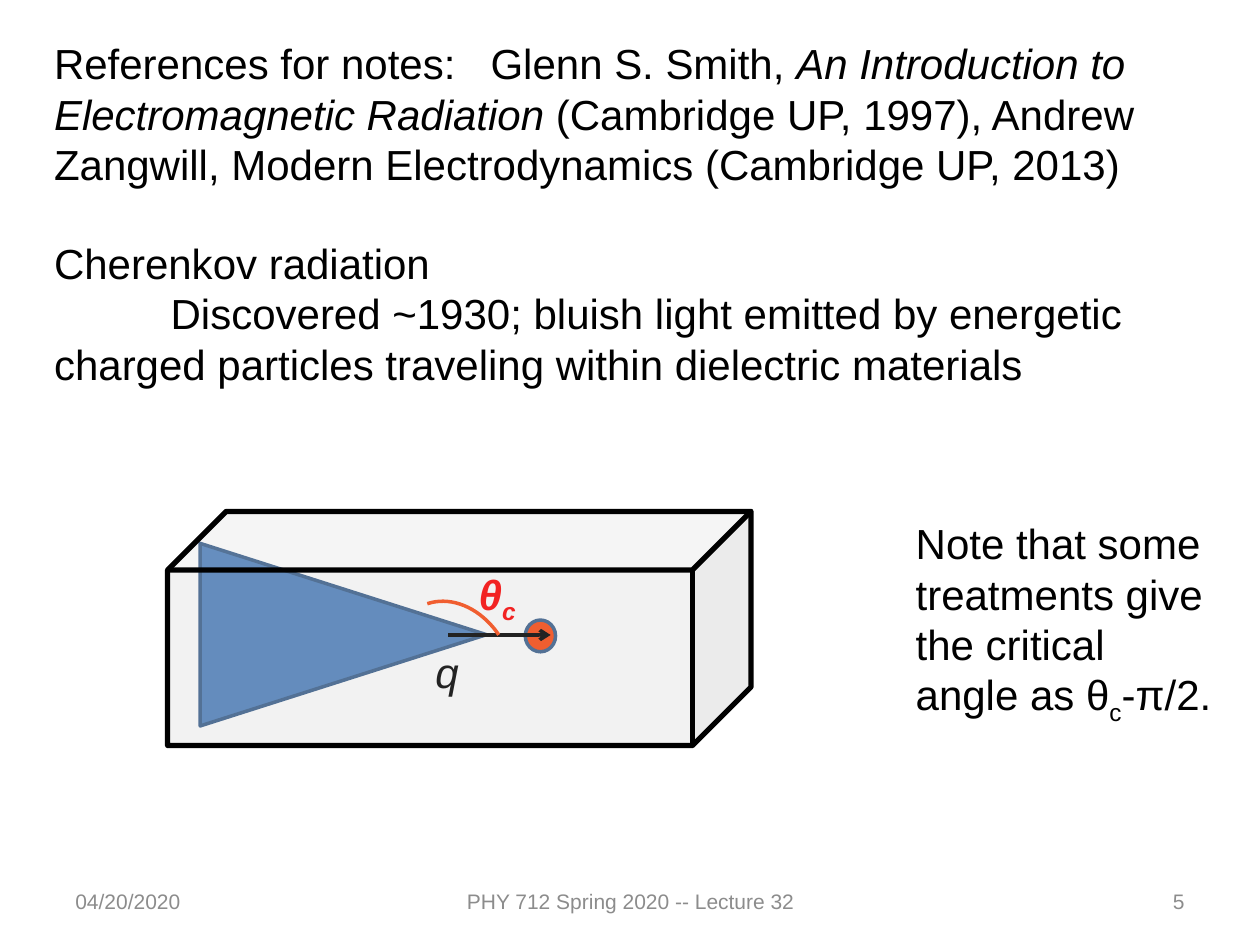
from lxml import etree
from pptx import Presentation, util as u
from pptx.dml.color import RGBColor
from pptx.enum import shapes, text
from pptx.oxml.ns import qn

BLACK, GREY, RED = "000000", "8C8C8C", "FF0000"
ORANGE, BLUE, DARK_BLUE = "FC4810", "4F81BD", "3A5F8C"
LEFT, CENTER, RIGHT = text.PP_ALIGN.LEFT, text.PP_ALIGN.CENTER, text.PP_ALIGN.RIGHT


def color(hex_code):
    return RGBColor.from_string(hex_code)


def lengths(*values):
    return [u.Cm(value) for value in values]


class SlideBuilder:
    font = "Arial"
    body_size = 24

    def __init__(self, slide):
        self.slide = slide
        self.target = slide.shapes

    def start_group(self):
        self.target = self.slide.shapes.add_group_shape().shapes

    def end_group(self):
        self.target = self.slide.shapes

    def text(self, place, *paragraphs, anchor=text.MSO_ANCHOR.TOP, **style):
        """Add a text box; each paragraph is a list of (words, formats) runs."""
        frame = self.target.add_textbox(*lengths(*place)).text_frame
        frame.word_wrap = True
        frame.vertical_anchor = anchor
        for number, runs in enumerate(paragraphs):
            paragraph = frame.paragraphs[0] if number == 0 else frame.add_paragraph()
            self.fill_paragraph(paragraph, runs, **style)
        return frame.paragraphs

    def fill_paragraph(self, paragraph, runs, size=body_size, ink=BLACK, align=LEFT,
                       bold=False, italic=False):
        paragraph.alignment = align
        font = paragraph.font
        font.name, font.size, font.bold = self.font, u.Pt(size), bold
        font.color.rgb = color(ink)
        for words, formats in runs:
            run = paragraph.add_run()
            run.text = words
            if italic or "italic" in formats:
                run.font.italic = True
            if "sub" in formats:
                run.font._element.set("baseline", "-25000")

    def shape(self, kind, place, line, width, fill=None, opacity=None, rotation=0):
        shape = self.target.add_shape(kind, *lengths(*place))
        shape.shadow.inherit = False
        shape.rotation = rotation
        shape.line.color.rgb = color(line)
        shape.line.width = u.Pt(width)
        if fill:
            shape.fill.solid()
            shape.fill.fore_color.rgb = color(fill)
        else:
            shape.fill.background()
        if opacity:
            tone = shape._element.spPr.find(qn("a:solidFill"))[0]
            etree.SubElement(tone, qn("a:alpha")).set("val", str(opacity * 1000))
        return shape

    def arrow(self, start, end, ink, width):
        arrow = self.target.add_connector(
            shapes.MSO_CONNECTOR.STRAIGHT, *lengths(*start, *end))
        arrow.line.color.rgb = color(ink)
        arrow.line.width = u.Pt(width)
        etree.SubElement(arrow.line._get_or_add_ln(), qn("a:tailEnd")).set("type", "arrow")
        etree.SubElement(arrow._element.spPr, qn("a:effectLst"))


def add_footer(page):
    for left, width, words, align in [
        (1.27, 5.92, "04/20/2020", LEFT),
        (8.69, 8.05, "PHY 712 Spring 2020 -- Lecture 32", CENTER),
        (18.21, 5.92, "5", RIGHT),
    ]:
        page.text((left, 17.65, width, 1.02), [(words, "")], size=12, ink=GREY,
                  align=align, anchor=text.MSO_ANCHOR.MIDDLE)


def add_references(page):
    references, topic, discovery = page.text(
        (0.84, 0.64, 22.86, 7.44),
        [("References for notes:\tGlenn S. Smith, ", ""),
         ("An Introduction to Electromagnetic Radiation", "italic"),
         (" (Cambridge UP, 1997), Andrew Zangwill, "
          "Modern Electrodynamics (Cambridge UP, 2013)", "")],
        [("Cherenkov radiation", "")],
        [("Discovered ~1930; bluish light emitted by energetic charged particles "
          "traveling within dielectric materials", "")],
    )
    tabs = etree.Element(qn("a:tabLst"))
    etree.SubElement(tabs, qn("a:tab"), pos=str(u.Cm(8.8)), algn="l")
    references._p.pPr.find(qn("a:defRPr")).addprevious(tabs)
    topic.space_before = u.Pt(27.6)
    discovery._p.pPr.set("indent", str(u.Cm(2.35)))


def add_cherenkov_diagram(page):
    kinds = shapes.MSO_SHAPE
    page.start_group()
    page.shape(kinds.ISOSCELES_TRIANGLE, (5.08, 9.91, 3.68, 5.77), DARK_BLUE, 2,
               fill=BLUE, rotation=90)
    page.shape(kinds.OVAL, (10.59, 12.5, 0.61, 0.64), DARK_BLUE, 2, fill=ORANGE)
    page.arrow((9.04, 12.8), (11.1, 12.8), BLACK, 2)
    page.text((8.53, 12.9, 1.85, 1.27), [("q", "")], italic=True)
    angle = page.shape(kinds.ARC, (7.87, 12.09, 2.49, 3.18), ORANGE, 2, rotation=341.7)
    angle.adjustments[0], angle.adjustments[1] = 162, 201.07
    page.text((9.4, 11.33, 1.85, 1.27), [("θ", ""), ("c", "sub")],
              ink=RED, bold=True, italic=True)
    page.end_group()
    page.shape(kinds.CUBE, (3.38, 10.31, 11.76, 4.72), BLACK, 3, fill="BFBFBF", opacity=19)


def main():
    deck = Presentation()
    deck.slide_width, deck.slide_height = lengths(25.4, 19.05)
    page = SlideBuilder(deck.slides.add_slide(deck.slide_layouts[6]))
    add_footer(page)
    add_references(page)
    add_cherenkov_diagram(page)
    page.text((18.21, 10.31, 6.55, 4.37),
              [("Note that some treatments give the critical angle as θ", ""),
               ("c", "sub"), ("-π/2.", "")])
    deck.save("out.pptx")


if __name__ == "__main__":
    main()
